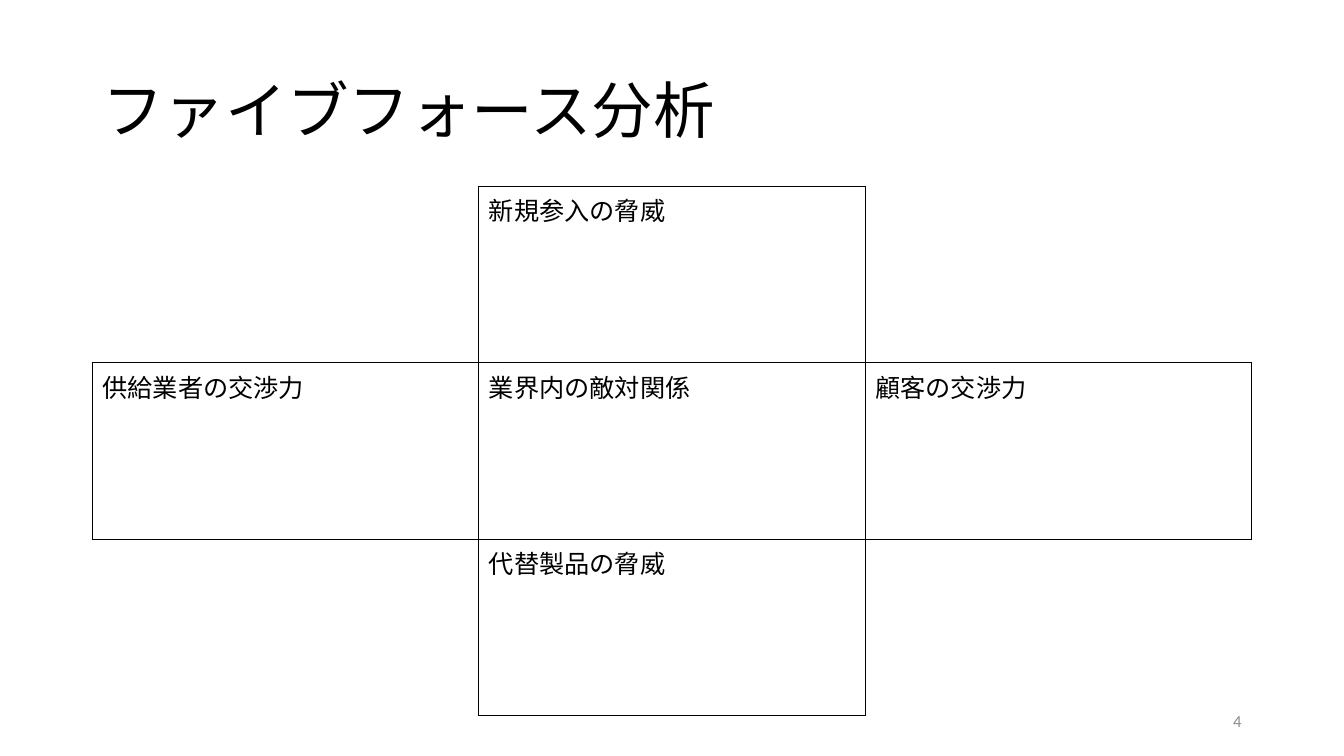
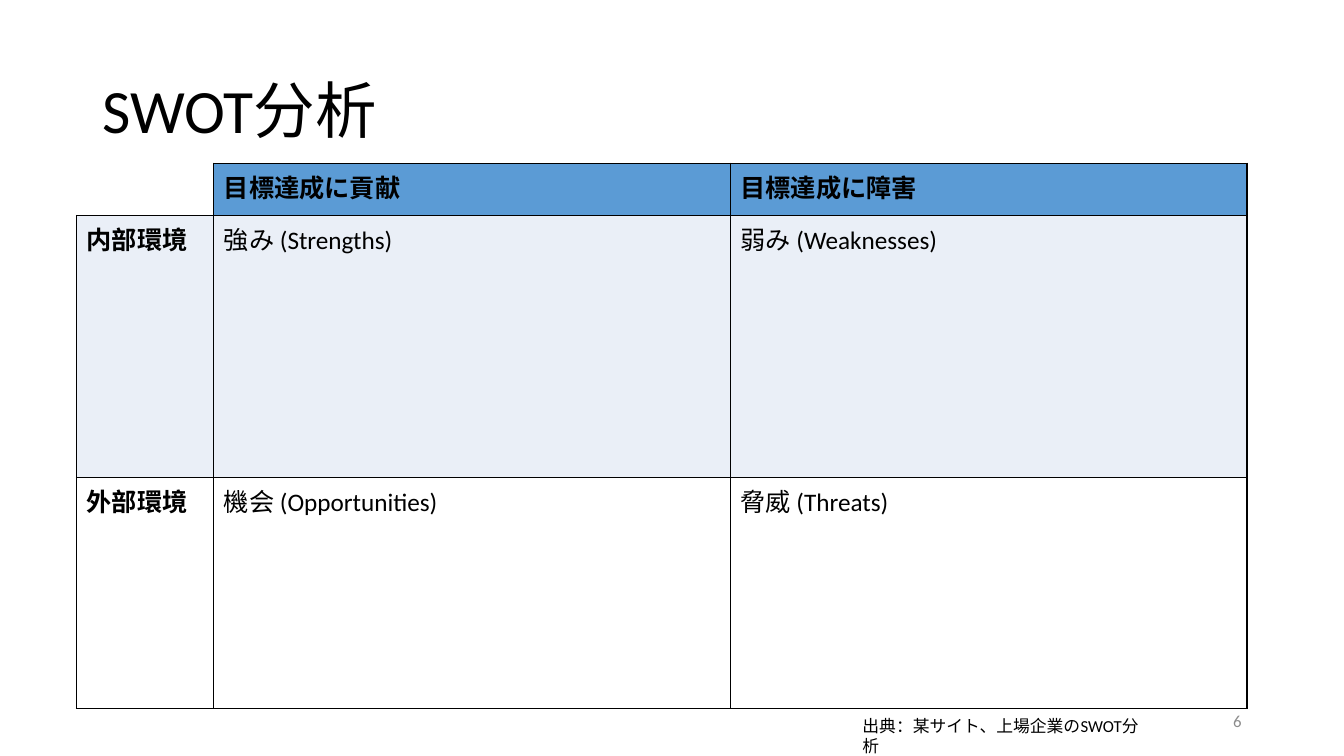
from dataclasses import dataclass

from lxml import etree
from pptx import Presentation
from pptx import util as u
from pptx.dml.color import RGBColor
from pptx.enum import text as t
from pptx.oxml import ns


@dataclass(frozen=True)
class Theme:
    font: str = "Calibri"
    ink: str = "000000"
    muted: str = "8C8C8C"
    header: str = "5B9BD5"
    band: str = "EAEFF7"
    paper: str = "FFFFFF"
    title_size: int = 44
    body_size: int = 18
    small_size: int = 12
    border: int = 1


THEME = Theme()
PAGE_SIZE = (960, 540)
TITLE_BOX = (66, 28.8, 828, 104.4)
NUMBER_BOX = (678, 500.4, 216, 28.8)


def write(frame, words, size=THEME.body_size, color=THEME.ink, bold=False,
          align=t.PP_ALIGN.LEFT, spacing=1.0):
    """Fill a text frame with one formatted paragraph."""
    para = frame.paragraphs[0]
    para.alignment = align
    para.line_spacing = spacing
    span = para.add_run()
    span.text = words
    span.font.name = THEME.font
    span.font.size = u.Pt(size)
    span.font.bold = bold
    span.font.color.rgb = RGBColor.from_string(color)


def add_label(page, box, words, anchor=t.MSO_ANCHOR.MIDDLE, **style):
    frame = page.shapes.add_textbox(*map(u.Pt, box)).text_frame
    frame.word_wrap = True
    frame.vertical_anchor = anchor
    write(frame, words, **style)


def set_borders(cell, sides):
    """Draw or clear each side; border lines come before the cell fill."""
    properties = cell._tc.get_or_add_tcPr()
    for index, (side, drawn) in enumerate(sides.items()):
        line = etree.Element(ns.qn(f"a:ln{side}"), w=str(u.Pt(THEME.border)))
        if drawn:
            fill = etree.SubElement(line, ns.qn("a:solidFill"))
            etree.SubElement(fill, ns.qn("a:srgbClr"), val=THEME.ink)
        else:
            etree.SubElement(line, ns.qn("a:noFill"))
        properties.insert(index, line)


def add_matrix(page, origin, widths, heights, rows, fills=None, headed=False):
    """Place a table whose empty cells have no outline of their own."""
    box = (*origin, sum(widths), sum(heights))
    table = page.shapes.add_table(len(rows), len(widths), *map(u.Pt, box)).table
    table.first_row = table.horz_banding = False
    for column, width in zip(table.columns, widths):
        column.width = u.Pt(width)
    for row, height in zip(table.rows, heights):
        row.height = u.Pt(height)

    def filled(r, c):
        return 0 <= r < len(rows) and 0 <= c < len(widths) and bool(rows[r][c])

    for r, row in enumerate(rows):
        for c, words in enumerate(row):
            cell = table.cell(r, c)
            if words:
                write(cell.text_frame, words, bold=headed and 0 in (r, c))
            if fills and words:
                cell.fill.solid()
                cell.fill.fore_color.rgb = RGBColor.from_string(fills[r])
            else:
                cell.fill.background()
            neighbours = {"L": (r, c - 1), "R": (r, c + 1),
                          "T": (r - 1, c), "B": (r + 1, c)}
            set_borders(cell, {side: bool(words) or filled(*place)
                               for side, place in neighbours.items()})


def add_page(deck, title, number):
    """Start a page with the shared title and page number."""
    page = deck.slides.add_slide(deck.slide_layouts[6])
    add_label(page, TITLE_BOX, title, size=THEME.title_size, spacing=0.9)
    add_label(page, NUMBER_BOX, number, size=THEME.small_size,
              color=THEME.muted, align=t.PP_ALIGN.RIGHT)
    return page


def five_forces(deck):
    page = add_page(deck, "ファイブフォース分析", "4")
    # Cross of forces around the industry
    add_matrix(page, (66, 133.2), [276] * 3, [126] * 3, [
        ["", "新規参入の脅威", ""],
        ["供給業者の交渉力", "業界内の敵対関係", "顧客の交渉力"],
        ["", "代替製品の脅威", ""],
    ])


def swot(deck):
    page = add_page(deck, "SWOT分析", "6")
    # Environment by effect on the goal
    add_matrix(page, (54.7, 116.5), [98, 369, 369], [37.5, 187, 165], [
        ["", "目標達成に貢献", "目標達成に障害"],
        ["内部環境", "強み (Strengths)", "弱み (Weaknesses)"],
        ["外部環境", "機会 (Opportunities)", "脅威 (Threats)"],
    ], fills=[THEME.header, THEME.band, THEME.paper], headed=True)
    # Source note
    add_label(page, (609, 507.6, 213, 21.6), "出典：某サイト、上場企業のSWOT分析",
              anchor=t.MSO_ANCHOR.TOP, size=THEME.small_size)


def main():
    deck = Presentation()
    deck.slide_width, deck.slide_height = map(u.Pt, PAGE_SIZE)
    five_forces(deck)
    swot(deck)
    deck.save("out.pptx")


if __name__ == "__main__":
    main()
